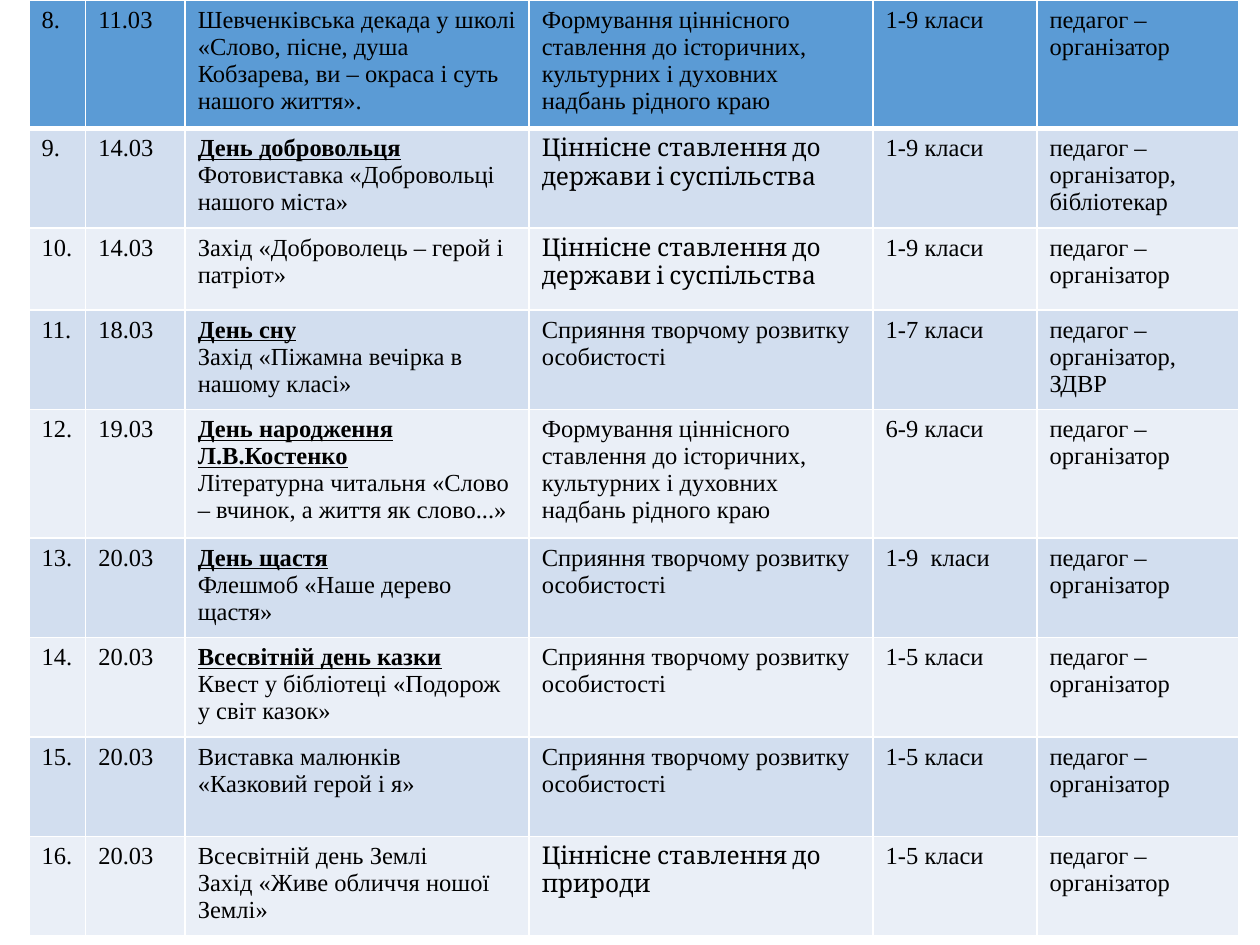
from dataclasses import dataclass

from lxml import etree
from pptx import Presentation
from pptx.dml.color import RGBColor
from pptx.oxml.ns import qn
from pptx.util import Inches, Pt


@dataclass(frozen=True)
class Theme:
    font: str = "Times New Roman"
    values_font: str = "Cambria"
    size: int = 14
    ink: str = "000000"
    border: str = "FFFFFF"
    first_row: str = "5B9BD5"
    bands: tuple = ("EAEFF7", "D2DEEF")


THEME = Theme()
COL_WIDTHS = [0.45, 0.79, 2.73, 2.73, 1.3, 1.6]
ROW_HEIGHTS = [1.02, 0.79, 0.65, 0.79, 1.02, 0.79, 0.79, 0.79, 0.79]
GOAL_COL = 3

HERITAGE = ("Формування ціннісного ставлення до історичних,\n"
            "культурних і духовних надбань рідного краю")
CREATIVITY = "Сприяння творчому розвитку особистості"
VALUES = "Ціннісне ставлення до "
STATE = VALUES + "держави і суспільства"
NATURE = VALUES + " природи"
ORGANISER = "педагог –організатор"

# "\n" starts a paragraph, "\v" a line; text between asterisks is a heading.
EVENTS = [
    ("8.", "11.03", "Шевченківська декада у школі «Слово, пісне, душа Кобзарева, "
     "ви – окраса і суть нашого життя».", HERITAGE, "1-9 класи", ORGANISER),
    ("9.", "14.03", "*День добровольця*\nФотовиставка «Добровольці нашого міста»",
     STATE, "1-9 класи", ORGANISER + ", бібліотекар"),
    ("10.", "14.03", "Захід «Доброволець – герой і патріот»",
     STATE, "1-9 класи", ORGANISER),
    ("11.", "18.03", "*День сну*\vЗахід «Піжамна вечірка в нашому класі»",
     CREATIVITY, "1-7 класи", ORGANISER + ", ЗДВР"),
    ("12.", "19.03", "*День народження Л.В.Костенко*\vЛітературна читальня "
     "«Слово – вчинок, а життя як слово...»", HERITAGE, "6-9 класи", ORGANISER),
    ("13.", "20.03", "*День щастя*\vФлешмоб «Наше дерево щастя»",
     CREATIVITY, "1-9  класи", ORGANISER),
    ("14.", "20.03", "*Всесвітній день казки*\vКвест у бібліотеці «Подорож у світ казок»",
     CREATIVITY, "1-5 класи", ORGANISER),
    ("15.", "20.03", "Виставка малюнків «Казковий герой і я»",
     CREATIVITY, "1-5 класи", ORGANISER),
    ("16.", "20.03", "Всесвітній день Землі\nЗахід «Живе обличчя ношої Землі»",
     NATURE, "1-5 класи", ORGANISER),
]


def add_run(p, text, font, heading):
    r = p.add_run()
    r.text = text
    r.font.name = font
    r.font.size = Pt(THEME.size)
    r.font.bold = r.font.underline = heading
    r.font.color.rgb = RGBColor.from_string(THEME.ink)


def write_cell(cell, text, font):
    tf = cell.text_frame
    for i, paragraph in enumerate(text.split("\n")):
        p = tf.add_paragraph() if i else tf.paragraphs[0]
        for j, line in enumerate(paragraph.split("\v")):
            if j:
                p.add_line_break()
            add_run(p, line.strip("*"), font, line.startswith("*"))


def set_borders(cell, **widths):
    """Draw the left, right, top and bottom borders, with widths in points."""
    tc_pr = cell._tc.get_or_add_tcPr()
    for side in "LRTB":
        ln = etree.SubElement(tc_pr, qn(f"a:ln{side}"), w=str(Pt(widths.get(side, 1))))
        fill = etree.SubElement(ln, qn("a:solidFill"))
        etree.SubElement(fill, qn("a:srgbClr"), val=THEME.border)


def fill_cell(cell, color):
    cell.fill.solid()
    cell.fill.fore_color.rgb = RGBColor.from_string(color)


def add_events_table(s):
    frame = s.shapes.add_table(len(EVENTS), len(COL_WIDTHS), Inches(0.23), 0,
                               Inches(sum(COL_WIDTHS)), Inches(sum(ROW_HEIGHTS)))
    table = frame.table
    for column, width in zip(table.columns, COL_WIDTHS):
        column.width = Inches(width)
    for row, height in zip(table.rows, ROW_HEIGHTS):
        row.height = Inches(height)

    for i, event in enumerate(EVENTS):
        color = THEME.bands[i % 2] if i else THEME.first_row
        edges = {0: {"B": 3}, 1: {"T": 3}}.get(i, {})
        for j, text in enumerate(event):
            cell = table.cell(i, j)
            is_value = j == GOAL_COL and text.startswith(VALUES)
            write_cell(cell, text, THEME.values_font if is_value else THEME.font)
            set_borders(cell, **edges)
            fill_cell(cell, color)


def main():
    prs = Presentation()
    prs.slide_width, prs.slide_height = Inches(10), Inches(7.5)
    s = prs.slides.add_slide(prs.slide_layouts[6])
    add_events_table(s)
    prs.save("out.pptx")


if __name__ == "__main__":
    main()
